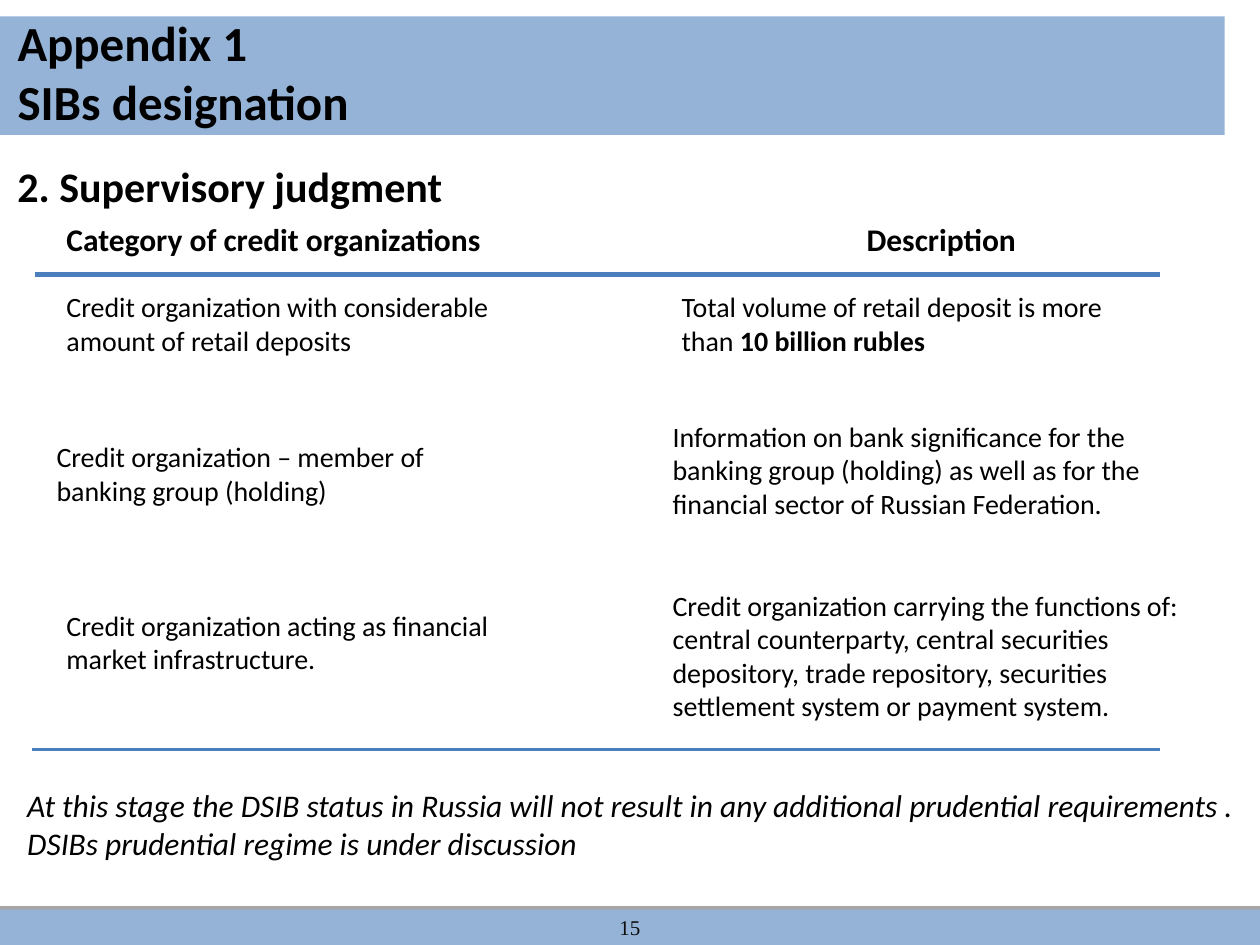
from pptx import Presentation
from pptx.dml.color import RGBColor
from pptx.enum.shapes import MSO_CONNECTOR as CONN, MSO_SHAPE as SHAPE
from pptx.enum.text import MSO_ANCHOR as ANCHOR, MSO_AUTO_SIZE as AUTO, PP_ALIGN as ALIGN
from pptx.oxml.ns import qn
from pptx.util import Cm, Pt
from lxml.etree import SubElement

# Content: a paragraph is a list of (text, extra format) runs
TITLE = [[("Appendix 1", {})], [("SIBs designation", {})]]
NOTE = [
    [("At this stage the DSIB status in Russia will not result in any additional prudential requirements .", {})],
    [("DSIBs prudential regime is under discussion", {})],
]
HEADING = dict(size=24, bold=True)
COLUMN = dict(size=18, bold=True)
CELL = dict(size=16)
REMARK = dict(size=18, italic=True)

# Left, top, width, height in cm, format, paragraphs
TEXTS = [
    (0.1, 3.12, 9.17, 1.27, HEADING, [[("2. Supervisory judgment", {})]]),
    (1.09, 4.32, 9.93, 1.02, COLUMN, [[("Category of credit organizations", {})]]),
    (17.22, 4.32, 3.56, 1.02, COLUMN, [[("Description", {})]]),
    (1.09, 5.72, 10.16, 1.63, CELL,
     [[("Credit organization with considerable amount of retail deposits", {})]]),
    (13.49, 5.72, 10.08, 1.63, CELL,
     [[("Total volume of retail deposit is more than ", {}), ("10 billion rubles", dict(bold=True))]]),
    (0.89, 8.74, 9.8, 1.63, CELL,
     [[("Credit organization – member of banking group (holding)", {})]]),
    (13.31, 8.33, 10.39, 2.31, CELL,
     [[("Information on bank significance for the banking group (holding) as well as for "
        "the financial sector of Russian Federation.", {})]]),
    (1.09, 12.14, 9.78, 1.63, CELL,
     [[("Credit organization acting as financial market infrastructure.", {})]]),
    (13.31, 11.73, 11.05, 3, CELL,
     [[("Credit organization carrying the functions of: central counterparty, central securities "
        "depository, trade repository, securities settlement system or payment system.", {})]]),
    (0.3, 15.72, 24.99, 1.8, REMARK, NOTE),
]
RULES = [(0.71, 5.53, 2.5), (0.64, 15.11, 2)]  # left, y in cm, width in points
RULE_END = 23.39
BAR, EDGE, RULE = "95B3D7", "A6A6A6", "4B7EBC"


def paint(color_format, value):
    color_format.rgb = RGBColor.from_string(value)


def write(tf, paragraphs, fmt, color="000000", name="Calibri", align=ALIGN.LEFT):
    for i, runs in enumerate(paragraphs):
        p = tf.paragraphs[0] if i == 0 else tf.add_paragraph()
        p.alignment = align
        for text, extra in runs:
            r = p.add_run()
            r.text = text
            values = dict(fmt, name=name, **extra)
            values["size"] = Pt(values["size"])
            for key, value in values.items():
                setattr(r.font, key, value)
            paint(r.font.color, color)


def add_bar(s, left, top, width, height, edge=None):
    sp = s.shapes.add_shape(SHAPE.RECTANGLE, Cm(left), Cm(top), Cm(width), Cm(height))
    sp.shadow.inherit = False
    sp.fill.solid()
    paint(sp.fill.fore_color, BAR)
    if edge:
        paint(sp.line.color, edge)
        sp.line.width = Pt(2)
    else:
        sp.line.fill.background()
    return sp


prs = Presentation()
prs.slide_width, prs.slide_height = Cm(25.4), Cm(19.05)
s = prs.slides.add_slide(prs.slide_layouts[5])

# Title bar, with the title in front of it
add_bar(s, 0, 0.33, 24.69, 2.39)
title = s.shapes.title
title.left, title.top, title.width, title.height = Cm(0.1), Cm(0.13), Cm(21.21), Cm(2.64)
tf = title.text_frame
tf.vertical_anchor, tf.auto_size = ANCHOR.TOP, AUTO.NONE
write(tf, TITLE, dict(size=28, bold=True))
s.shapes._spTree.append(title._element)

# Rules above and below the rows
for left, y, width in RULES:
    line = s.shapes.add_connector(CONN.STRAIGHT, Cm(left), Cm(y), Cm(RULE_END), Cm(y))
    paint(line.line.color, RULE)
    line.line.width = Pt(width)
    SubElement(line._element.spPr, qn("a:effectLst"))

# Headings, rows and closing remark
for left, top, width, height, fmt, paragraphs in TEXTS:
    tf = s.shapes.add_textbox(Cm(left), Cm(top), Cm(width), Cm(height)).text_frame
    tf.word_wrap = True
    write(tf, paragraphs, fmt)

# Footer bar with the page number
add_bar(s, 0, 18.31, 25.4, 0.74, EDGE)
footer = add_bar(s, 0, 18.34, 25.4, 0.71)
footer.text_frame.vertical_anchor = ANCHOR.MIDDLE
write(footer.text_frame, [[("15", {})]], dict(size=12), "0D0D0D", "Times New Roman", ALIGN.CENTER)

prs.save("out.pptx")
